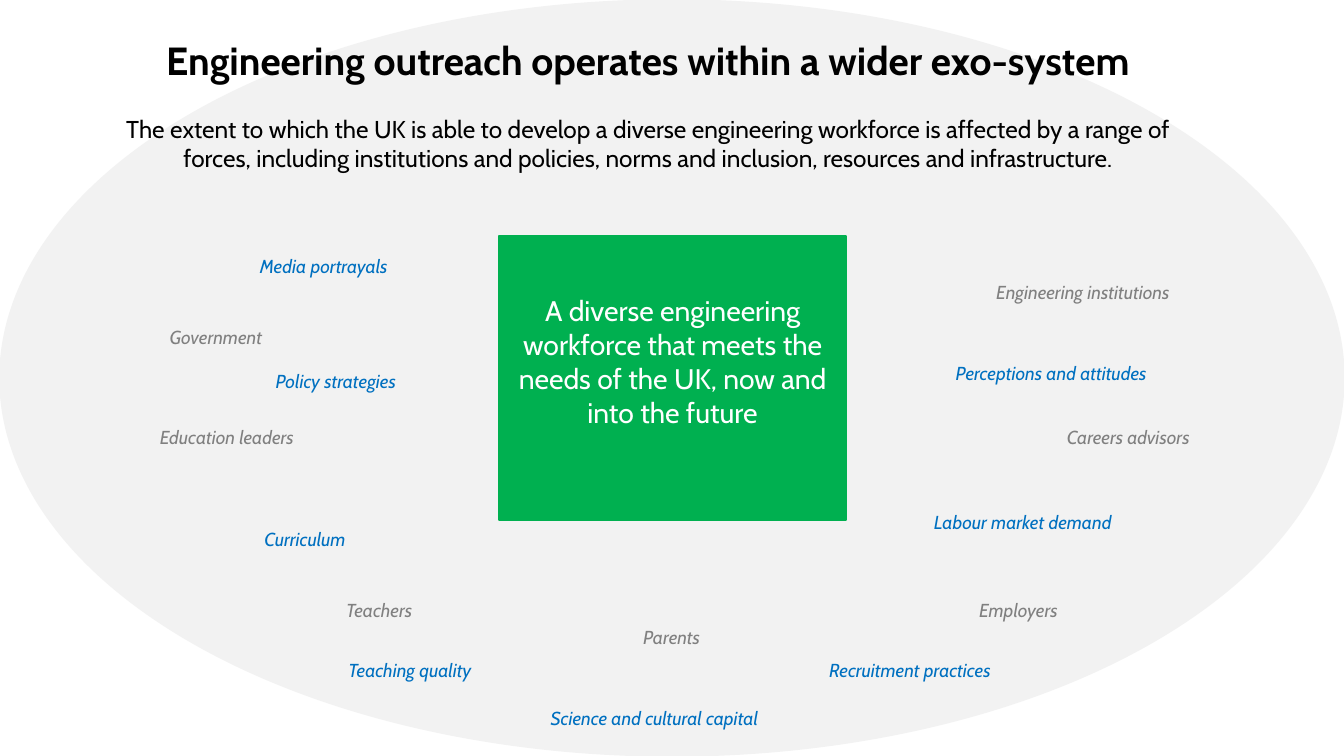
import pptx
import pptx.dml.color
import pptx.enum.shapes
import pptx.enum.text
import pptx.util
from pptx.util import Inches

RGBColor = pptx.dml.color.RGBColor
MSO_SHAPE = pptx.enum.shapes.MSO_SHAPE
MSO_ANCHOR = pptx.enum.text.MSO_ANCHOR

BLACK = RGBColor(0x00, 0x00, 0x00)
WHITE = RGBColor(0xFF, 0xFF, 0xFF)
PALE_GREY = RGBColor(0xF2, 0xF2, 0xF2)
GREY = RGBColor(0x80, 0x80, 0x80)
GREEN = RGBColor(0x00, 0xB0, 0x50)
BLUE = RGBColor(0x00, 0x70, 0xC0)

FONT = "Cabin"
WIDTH, HEIGHT = 13.33, 7.5
LABEL_HEIGHT = 0.33

# Each label: text, left, top, width in inches
ACTORS = [
    ("Government", 0.95, 3.18, 2.38),
    ("Education leaders", 1.06, 4.17, 2.38),
    ("Teachers", 2.57, 5.89, 2.38),
    ("Parents", 5.47, 6.16, 2.38),
    ("Employers", 8.91, 5.89, 2.38),
    ("Careers advisors", 10, 4.17, 2.38),
    ("Engineering institutions", 9.55, 2.74, 2.38),
]
FORCES = [
    ("Policy strategies", 2.14, 3.62, 2.38),
    ("Perceptions and attitudes", 9.09, 3.54, 2.67),
    ("Labour market demand", 8.81, 5.02, 2.67),
    ("Recruitment practices", 7.69, 6.49, 2.67),
    ("Science and cultural capital", 5.3, 6.96, 2.38),
    ("Curriculum", 1.75, 5.19, 2.55),
    ("Media portrayals", 2.02, 2.48, 2.38),
    ("Teaching quality", 2.79, 6.49, 2.55),
]


def write_text(shape, text, size, color, bold=False, italic=False, anchor=MSO_ANCHOR.TOP):
    """Fill the shape with one centred, wrapped paragraph."""
    frame = shape.text_frame
    frame.word_wrap = True
    frame.auto_size = pptx.enum.text.MSO_AUTO_SIZE.NONE
    frame.vertical_anchor = anchor
    paragraph = frame.paragraphs[0]
    paragraph.alignment = pptx.enum.text.PP_ALIGN.CENTER
    run = paragraph.add_run()
    run.text = text
    run.font.name = FONT
    run.font.size = pptx.util.Pt(size)
    run.font.bold = bold
    run.font.italic = italic
    run.font.color.rgb = color


def add_text(slide, box, text, size, color, italic=False):
    shape = slide.shapes.add_textbox(*map(Inches, box))
    write_text(shape, text, size, color, italic=italic)


def add_solid(slide, kind, box, color):
    shape = slide.shapes.add_shape(kind, *map(Inches, box))
    shape.shadow.inherit = False
    shape.fill.solid()
    shape.fill.fore_color.rgb = color
    shape.line.color.rgb = color
    shape.line.width = pptx.util.Pt(1)
    return shape


def add_backdrop(slide, box):
    """Draw the ellipse behind everything, the title included."""
    ellipse = add_solid(slide, MSO_SHAPE.OVAL, box, PALE_GREY)
    title = slide.shapes.title.element
    title.addprevious(ellipse.element)


def add_heading(slide, box):
    left, top, width, height = box
    title_height = 0.6
    title = slide.shapes.title
    title.left, title.top = Inches(left), Inches(top)
    title.width, title.height = Inches(width), Inches(title_height)
    write_text(title, "Engineering outreach operates within a wider exo-system",
               28, BLACK, bold=True)
    intro_offset = 0.77
    add_text(slide, (left, top + intro_offset, width, height - intro_offset),
             "The extent to which the UK is able to develop a diverse engineering "
             "workforce is affected by a range of forces, including institutions and "
             "policies, norms and inclusion, resources and infrastructure.",
             17.4, BLACK)


def add_goal(slide, box):
    goal = add_solid(slide, MSO_SHAPE.RECTANGLE, box, GREEN)
    write_text(goal, "A diverse engineering workforce that meets the needs of the UK, "
               "now and into the future", 20.2, WHITE, anchor=MSO_ANCHOR.MIDDLE)
    goal.text_frame.margin_bottom = Inches(0.39)


def add_labels(slide, labels, color):
    for text, left, top, width in labels:
        add_text(slide, (left, top, width, LABEL_HEIGHT), text, 13.4, color, italic=True)


def main():
    presentation = pptx.Presentation()
    presentation.slide_width = Inches(WIDTH)
    presentation.slide_height = Inches(HEIGHT)
    slide = presentation.slides.add_slide(presentation.slide_layouts[5])
    add_backdrop(slide, (0, 0, WIDTH, HEIGHT))
    add_goal(slide, (4.95, 2.34, 3.44, 2.82))
    add_heading(slide, (0.91, 0.31, 11.03, 1.74))
    add_labels(slide, ACTORS, GREY)
    add_labels(slide, FORCES, BLUE)
    presentation.save("out.pptx")


if __name__ == "__main__":
    main()
